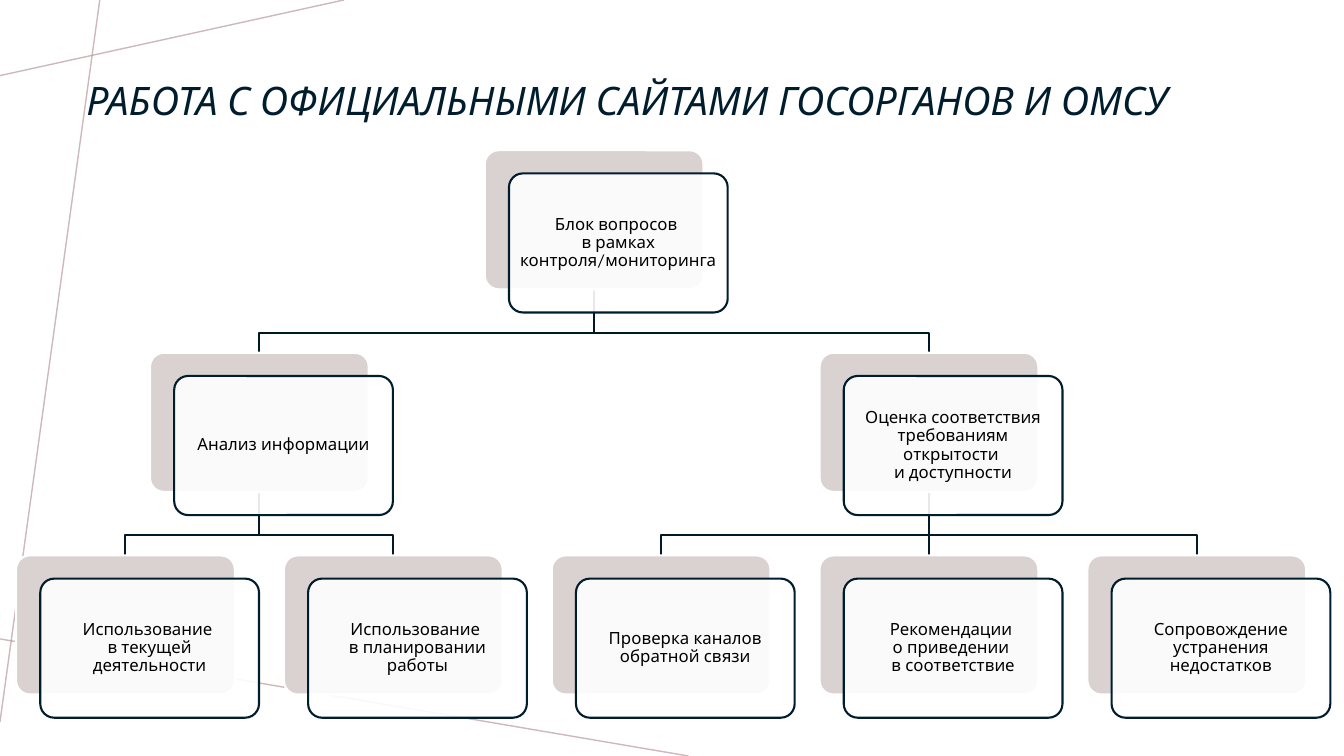
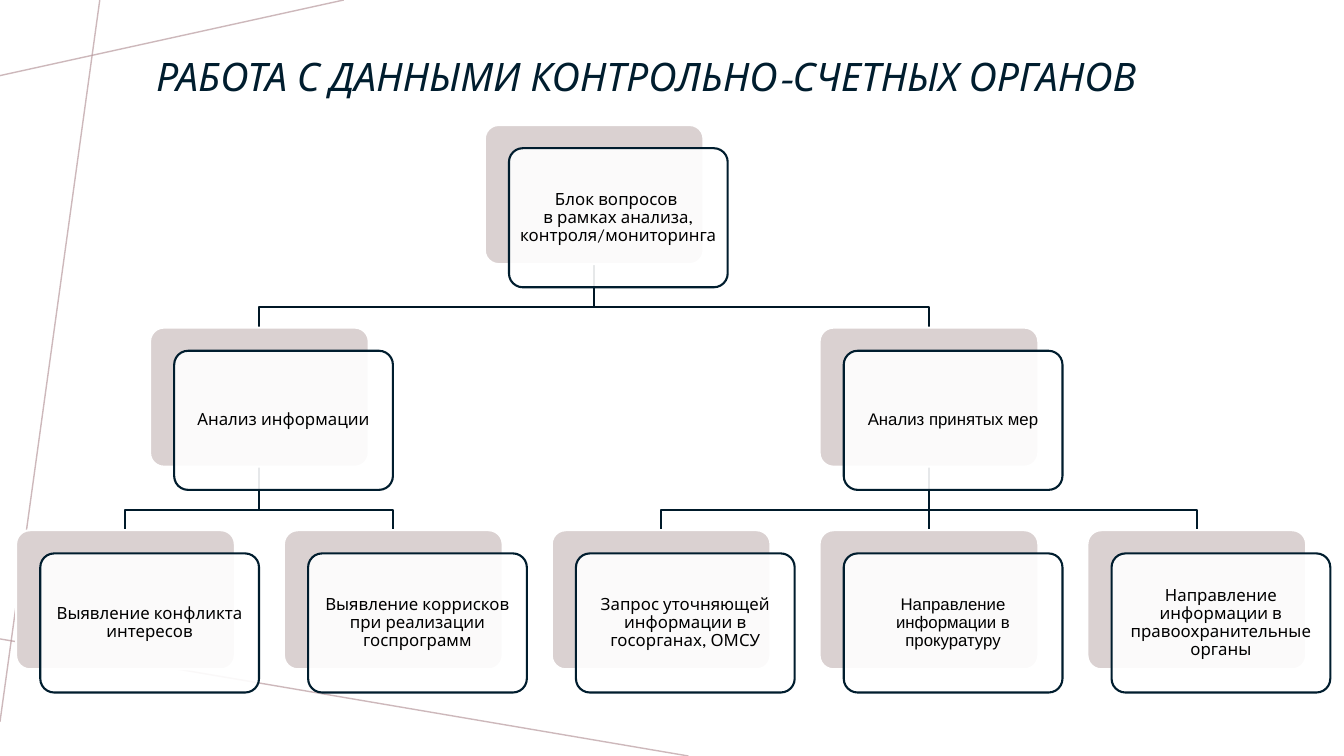
"""Build two slides, each a title over a three-level tree of cards."""
import itertools

import pptx
import pptx.dml.color
import pptx.enum.shapes
import pptx.enum.text
import pptx.oxml
import pptx.oxml.ns
import pptx.util

RGB = pptx.dml.color.RGBColor
WHITE = RGB(0xFF, 0xFF, 0xFF)
BLACK = RGB(0, 0, 0)
NAVY = RGB(0x00, 0x1D, 0x2E)
DEEP = RGB(0x00, 0x17, 0x25)
DARK = RGB(0x00, 0x1A, 0x2A)
SHADE = RGB(0xDA, 0xD1, 0xD1)
ROSE = RGB(0xB9, 0x9B, 0x9F)
MAIN, ALT = "League Spartan", "Arial"

SLIDES = [
    {
        "title": "РАБОТА С ОФИЦИАЛЬНЫМИ САЙТАМИ ГОСОРГАНОВ И ОМСУ",
        "box": (76, 71, 1257, 57),
        "top": 149,
        "tree": ("Блок вопросов \nв рамках контроля/мониторинга", MAIN, [
            ("Анализ информации", MAIN, [
                ("Использование \nв текущей деятельности", MAIN, []),
                ("Использование \nв планировании работы", MAIN, []),
            ]),
            ("Оценка соответствия требованиям открытости \nи доступности", MAIN, [
                ("Проверка каналов обратной связи", MAIN, []),
                ("Рекомендации \nо приведении \nв соответствие", MAIN, []),
                ("Сопровождение устранения недостатков", MAIN, []),
            ]),
        ]),
    },
    {
        "title": "РАБОТА С ДАННЫМИ КОНТРОЛЬНО-СЧЕТНЫХ ОРГАНОВ",
        "box": (145, 54, 1095, 50),
        "top": 124,
        "tree": ("Блок вопросов \nв рамках анализа, контроля/мониторинга", MAIN, [
            ("Анализ информации", MAIN, [
                ("Выявление конфликта интересов", MAIN, []),
                ("Выявление коррисков при реализации госпрограмм", MAIN, []),
            ]),
            ("Анализ принятых мер", ALT, [
                ("Запрос уточняющей информации в госорганах, ОМСУ", MAIN, []),
                ("Направление информации в прокуратуру", ALT, []),
                ("Направление информации в правоохранительные органы", MAIN, []),
            ]),
        ]),
    },
]
RAYS = [(341, 0, 0, 75), (683, 750, -5, 633), (99, 0, 0, 716)]
LEFT, STEP, ROW = 16, 265.7, 201
WIDE, HIGH = 217, 138
SHIFT_X, SHIFT_Y = 24, 23
DROP = 43


def px(*vals):
    """Turn px lengths into EMU."""
    return [round(val * 9144) for val in vals]


def fade(fill, share):
    """Make a solid fill or line colour partly opaque."""
    tone = fill.find(".//" + pptx.oxml.ns.qn("a:srgbClr"))
    alpha = tone.makeelement(pptx.oxml.ns.qn("a:alpha"), {"val": str(share * 1000)})
    tone.append(alpha)


def pen(line, color, width):
    """Set the colour and width of a line."""
    line.color.rgb = color
    line.width = pptx.util.Pt(width)


def write(shape, text, size=12, font=MAIN, color=BLACK, italic=False,
          align=pptx.enum.text.PP_ALIGN.CENTER,
          anchor=pptx.enum.text.MSO_ANCHOR.MIDDLE, inset=(5, 5)):
    """Fill a shape with one formatted paragraph."""
    frame = shape.text_frame
    frame.word_wrap = True
    frame.vertical_anchor = anchor
    frame.margin_left, frame.margin_top = px(*inset)
    frame.margin_right, frame.margin_bottom = px(*inset)
    para = frame.paragraphs[0]
    para.text = text.replace("\n", "\v")
    para.alignment = align
    para.line_spacing = 0.9
    for run in para.runs:
        run.font.size = pptx.util.Pt(size)
        run.font.name = font
        run.font.italic = italic
        run.font.color.rgb = color


def ray(shapes, ends, color, width):
    """Draw a straight line without a shadow."""
    line = shapes.add_connector(pptx.enum.shapes.MSO_CONNECTOR.STRAIGHT, *px(*ends))
    pen(line.line, color, width)
    props = line.element.spPr
    props.append(props.makeelement(pptx.oxml.ns.qn("a:effectLst"), {}))
    return line


def card(shapes, left, top, fill, edge):
    """Draw one rounded card."""
    shape = shapes.add_shape(pptx.enum.shapes.MSO_SHAPE.ROUNDED_RECTANGLE,
                             *px(left, top, WIDE, HIGH))
    shape.adjustments[0] = 0.1
    shape.shadow.inherit = False
    shape.fill.solid()
    shape.fill.fore_color.rgb = fill
    pen(shape.line, edge, 1.5)
    return shape


def link(shapes, start, end, color):
    """Join a parent to a child with a stepped line."""
    (x, y), (to_x, to_y) = start, end
    if abs(x - to_x) < 1:
        ray(shapes, (x, y, x, to_y), color, 1.5)
        return
    form = shapes.build_freeform(*px(x, y), scale=1.0)
    bends = [(x, y + DROP), (to_x, y + DROP), (to_x, to_y)]
    form.add_line_segments([px(*bend) for bend in bends], close=False)
    step = form.convert_to_shape()
    step.shadow.inherit = False
    step.fill.background()
    pen(step.line, color, 1.5)


def place(node, top, cols, cards, links, color=DEEP):
    """Centre each parent over its children and collect cards and links."""
    text, font, kids = node
    slot = len(cards)
    cards.append(None)
    spots = [place(kid, top + ROW, cols, cards, links, DARK) for kid in kids]
    left = sum(spots) / len(spots) if spots else LEFT + STEP * next(cols)
    cards[slot] = (text, font, left, top)
    mid = left + WIDE / 2
    for spot in spots:
        links.append(((mid, top + HIGH), (spot + WIDE / 2, top + ROW), color))
    return left


def draw(shapes, data):
    """Draw one slide's tree and title."""
    cards, links = [], []
    place(data["tree"], data["top"], itertools.count(), cards, links)
    for join in links:
        link(shapes, *join)
    for text, font, left, top in cards:
        card(shapes, left, top, SHADE, WHITE)
        front = card(shapes, left + SHIFT_X, top + SHIFT_Y, WHITE, NAVY)
        fade(front.element.spPr.find(pptx.oxml.ns.qn("a:solidFill")), 90)
        write(front, text, font=font)
    write(shapes.add_textbox(*px(*data["box"])), data["title"], size=28,
          color=NAVY, italic=True, align=pptx.enum.text.PP_ALIGN.LEFT,
          anchor=pptx.enum.text.MSO_ANCHOR.BOTTOM, inset=(10, 5))


def main():
    """Put the shared lines on the layout, then add the slides."""
    deck = pptx.Presentation()
    deck.slide_width = pptx.util.Inches(40 / 3)
    deck.slide_height = pptx.util.Inches(7.5)
    blank = deck.slide_layouts[6]
    for num, data in enumerate(SLIDES):
        shapes = deck.slides.add_slide(blank).shapes
        if num == 0:
            for ends in RAYS:
                line = ray(shapes, ends, ROSE, 1)
                fade(line.element.spPr, 70)
                blank.shapes.element.append(line.element)
        draw(shapes, data)
    deck.save("out.pptx")


if __name__ == "__main__":
    main()
